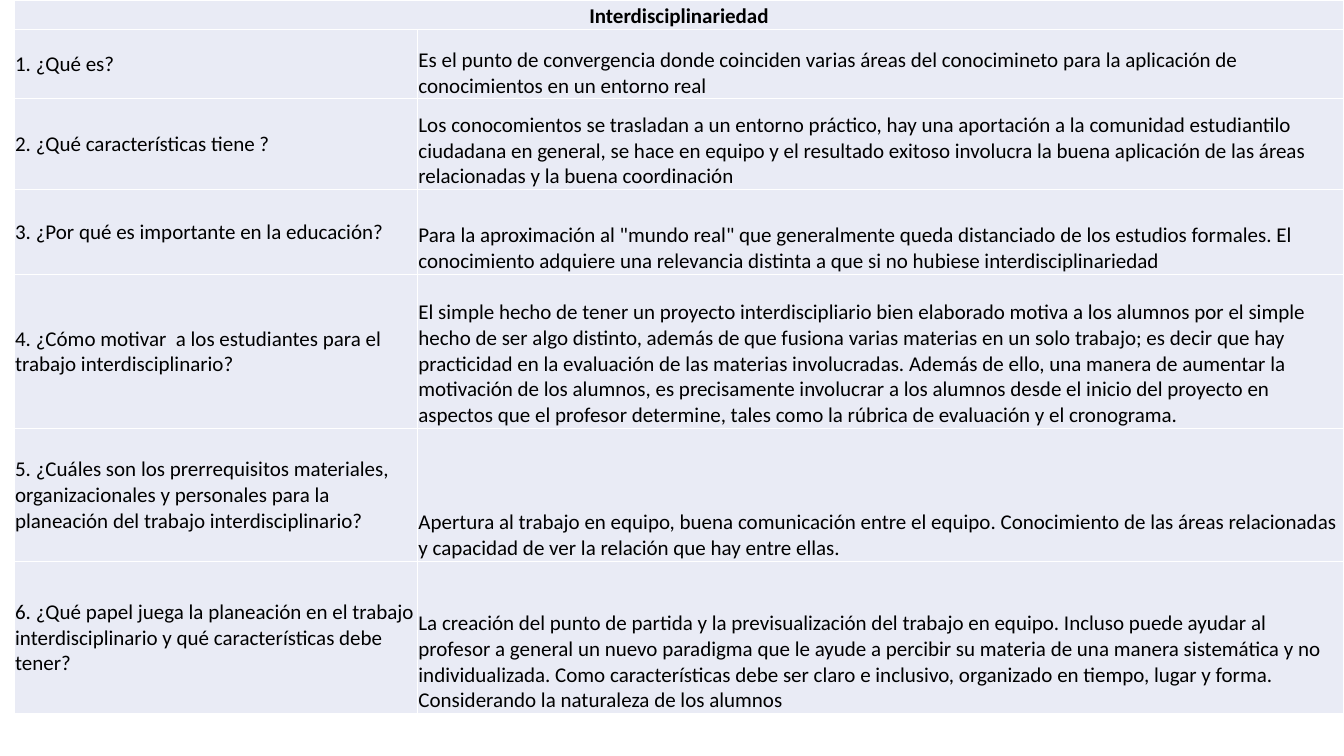
from lxml import etree
from pptx import Presentation, util as u
from pptx.dml.color import RGBColor
from pptx.enum import text
from pptx.oxml.ns import qn

BLACK = RGBColor(0, 0, 0)
WHITE = RGBColor(255, 255, 255)
PALE = RGBColor(0xE9, 0xEB, 0xF5)
FONT = "Calibri"
COLS = [4, 9.19]
ROWS = [0.29, 0.69, 0.9, 0.84, 1.53, 1.32, 1.51]
TITLE = "Interdisciplinariedad"
PAIRS = [
    ("1. ¿Qué es?",
     "Es el punto de convergencia donde coinciden varias áreas del conocimineto para la "
     "aplicación de conocimientos en un entorno real"),
    ("2. ¿Qué características tiene ?",
     "Los conocomientos se trasladan a un entorno práctico, hay una aportación a la comunidad "
     "estudiantilo ciudadana en general, se hace en equipo y el resultado exitoso involucra la "
     "buena aplicación de las áreas relacionadas y la buena coordinación"),
    ("3. ¿Por qué es importante en la educación?",
     'Para la aproximación al "mundo real" que generalmente queda distanciado de los estudios '
     "formales. El conocimiento adquiere una relevancia distinta a que si no hubiese "
     "interdisciplinariedad"),
    ("4. ¿Cómo motivar  a los estudiantes para el trabajo interdisciplinario?",
     "El simple hecho de tener un proyecto interdiscipliario bien elaborado motiva a los alumnos "
     "por el simple hecho de ser algo distinto, además de que fusiona varias materias en un solo "
     "trabajo; es decir que hay practicidad en la evaluación de las materias involucradas. Además "
     "de ello, una manera de aumentar la motivación de los alumnos, es precisamente involucrar a "
     "los alumnos desde el inicio del proyecto en aspectos que el profesor determine, tales como "
     "la rúbrica de evaluación y el cronograma."),
    ("5. ¿Cuáles son los prerrequisitos materiales, organizacionales y personales para la "
     "planeación del trabajo interdisciplinario?",
     "Apertura al trabajo en equipo, buena comunicación entre el equipo. Conocimiento de las "
     "áreas relacionadas y capacidad de ver la relación que hay entre ellas."),
    ("6. ¿Qué papel juega la planeación en el trabajo interdisciplinario y qué características "
     "debe tener?",
     "La creación del punto de partida y la previsualización del trabajo en equipo. Incluso puede "
     "ayudar al profesor a general un nuevo paradigma que le ayude a percibir su materia de una "
     "manera sistemática y no individualizada. Como características debe ser claro e inclusivo, "
     "organizado en tiempo, lugar y forma. Considerando la naturaleza de los alumnos"),
]


def frame(cell):
    props = cell._tc.get_or_add_tcPr()
    for side in ("a:lnL", "a:lnR", "a:lnT", "a:lnB"):
        line = etree.SubElement(props, qn(side), w=str(u.Pt(1)))
        fill = etree.SubElement(line, qn("a:solidFill"))
        etree.SubElement(fill, qn("a:srgbClr"), val=str(WHITE))


def style(cell, anchor):
    frame(cell)
    cell.fill.solid()
    cell.fill.fore_color.rgb = PALE
    cell.margin_left = cell.margin_right = cell.margin_top = u.Inches(0.01)
    cell.margin_bottom = 0
    cell.vertical_anchor = anchor


def write(cell, words, bold=False, align=text.PP_ALIGN.LEFT):
    cell.text = words
    para = cell.text_frame.paragraphs[0]
    para.alignment = align
    font = para.font
    font.name, font.size, font.bold = FONT, u.Pt(15), bold
    font.color.rgb = BLACK


def grid(slide, left, top, cols, rows):
    box = [u.Inches(n) for n in (left, top, sum(cols), sum(rows))]
    table = slide.shapes.add_table(len(rows), len(cols), *box).table
    table.first_row = table.horz_banding = False
    for col, width in zip(table.columns, cols):
        col.width = u.Inches(width)
    for row, height in zip(table.rows, rows):
        row.height = u.Inches(height)
    low, mid = text.MSO_ANCHOR.BOTTOM, text.MSO_ANCHOR.MIDDLE
    head = table.cell(0, 0)
    head.merge(table.cell(0, 1))
    for cell in table.rows[0].cells:
        style(cell, low)
    write(head, TITLE, True, text.PP_ALIGN.CENTER)
    for r, pair in enumerate(PAIRS, 1):
        for c, (words, anchor) in enumerate(zip(pair, (mid, low))):
            style(table.cell(r, c), anchor)
            write(table.cell(r, c), words)


def main():
    deck = Presentation()
    deck.slide_width, deck.slide_height = u.Inches(13.33), u.Inches(7.5)
    slide = deck.slides.add_slide(deck.slide_layouts[6])
    grid(slide, 0.14, 0, COLS, ROWS)
    deck.save("out.pptx")


if __name__ == "__main__":
    main()
